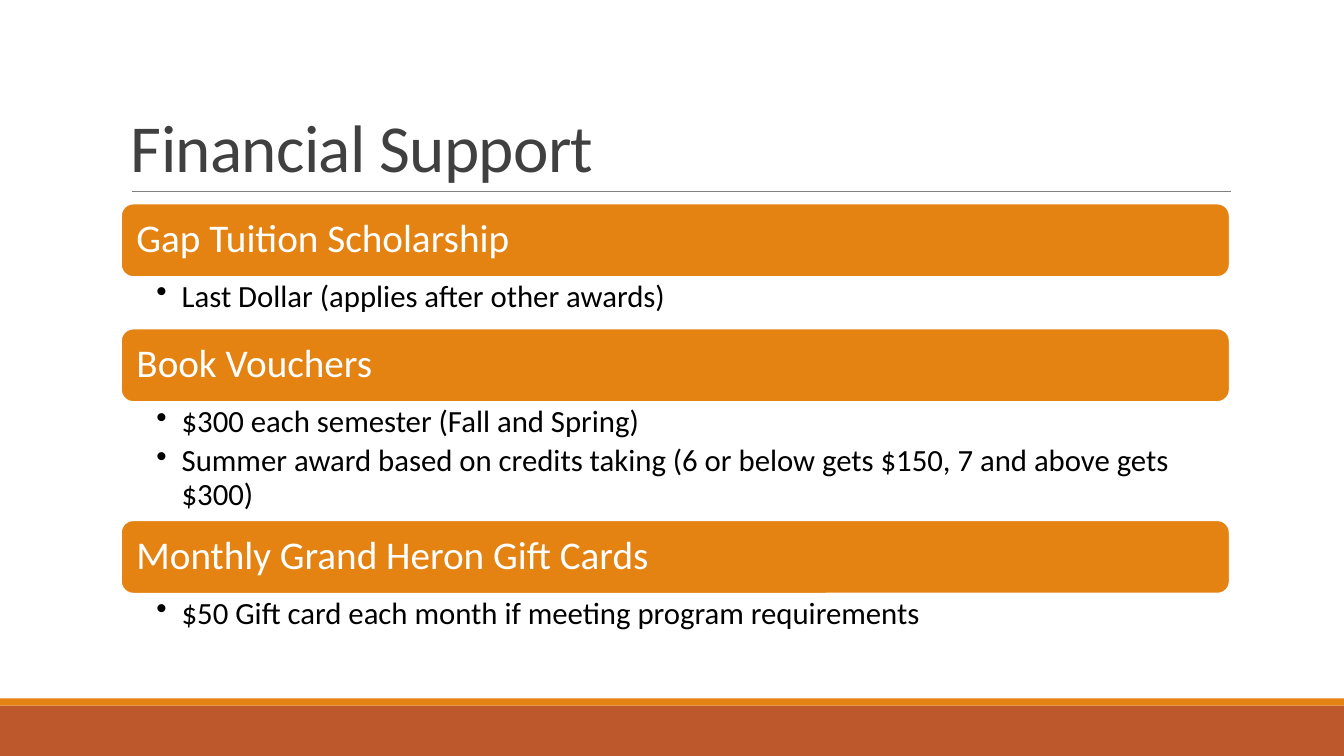
import dataclasses

import pptx
import pptx.dml.color
import pptx.enum.shapes
import pptx.enum.text
import pptx.oxml
import pptx.oxml.ns
import pptx.util

Cm = pptx.util.Cm
Pt = pptx.util.Pt
RGB = pptx.dml.color.RGBColor.from_string
Shape = pptx.enum.shapes.MSO_SHAPE
Anchor = pptx.enum.text.MSO_ANCHOR


@dataclasses.dataclass(frozen=True)
class Theme:
    font: str = "Calibri"
    head: int = 48
    bar: int = 28
    item: int = 22
    orange: str = "E48312"
    rust: str = "BD582C"
    grey: str = "404040"
    rule: str = "808080"
    white: str = "FFFFFF"
    black: str = "000000"


THEME = Theme()
WIDE, HIGH = 33.87, 19.05
BAR = 1.85

# Heading, height of the list below it, list items
GROUPS = [
    ("Gap Tuition Scholarship", 1.3,
     ["Last Dollar (applies after other awards)"]),
    ("Book Vouchers", 2.98,
     ["$300 each semester (Fall and Spring)",
      "Summer award based on credits taking "
      "(6 or below gets $150, 7 and above gets $300)"]),
    ("Monthly Grand Heron Gift Cards", 1.3,
     ["$50 Gift card each month if meeting program requirements"]),
]


def apply(target, values):
    for name, value in values.items():
        setattr(target, name, value)


def frame(shape, anchor, pads):
    """Set the anchor and the left, top, right and bottom insets in cm."""
    names = ("margin_left", "margin_top", "margin_right", "margin_bottom")
    apply(shape.text_frame, {
        "word_wrap": True,
        "auto_size": pptx.enum.text.MSO_AUTO_SIZE.NONE,
        "vertical_anchor": anchor,
        **{name: Cm(pad) for name, pad in zip(names, pads)},
    })


def write(para, text, size, color, lead, after=0):
    """Fill a paragraph; after is a share of the type size."""
    apply(para, {
        "alignment": pptx.enum.text.PP_ALIGN.LEFT,
        "line_spacing": lead,
        "space_before": Pt(0),
        "space_after": Pt(size * after),
    })
    run = para.add_run()
    run.text = text
    apply(run.font, {"name": THEME.font, "size": Pt(size)})
    run.font.color.rgb = RGB(color)
    return run


def block(slide, kind, box, fill):
    shape = slide.shapes.add_shape(kind, *map(Cm, box))
    shape.shadow.inherit = False
    shape.fill.solid()
    shape.fill.fore_color.rgb = RGB(fill)
    shape.line.fill.background()
    return shape


def footer(slide, left, top, width, height):
    strip = 0.18
    block(slide, Shape.RECTANGLE,
          (left, top + strip, width, height - strip), THEME.rust)
    block(slide, Shape.RECTANGLE, (left, top, width, strip), THEME.orange)


def header(slide, left, top, width, height):
    """Place the title with a thin rule along its foot."""
    title = slide.shapes.title
    apply(title, {"left": Cm(left), "top": Cm(top),
                  "width": Cm(width), "height": Cm(height)})
    frame(title, Anchor.BOTTOM, (0.25, 0.13, 0.25, 0.13))
    run = write(title.text_frame.paragraphs[0], "Financial Support",
                THEME.head, THEME.grey, 0.85)
    run.font._element.set("spc", "-50")

    foot = Cm(top + height)
    rule = slide.shapes.add_connector(
        pptx.enum.shapes.MSO_CONNECTOR.STRAIGHT,
        Cm(left + 0.28), foot, Cm(left + width + 0.03), foot)
    rule.line.color.rgb = RGB(THEME.rule)
    rule.line.width = Pt(0.5)
    rule._element.spPr.append(pptx.oxml.parse_xml(
        "<a:effectLst %s/>" % pptx.oxml.ns.nsdecls("a")))


def bullet(para):
    props = para._p.get_or_add_pPr()
    props.set("marL", str(Cm(0.64)))
    props.set("indent", str(-Cm(0.64)))
    props.append(pptx.oxml.parse_xml(
        '<a:buChar %s char="•"/>' % pptx.oxml.ns.nsdecls("a")))


def group(slide, left, top, width, height, name, items):
    """Place a heading bar with its list below."""
    bar = block(slide, Shape.ROUNDED_RECTANGLE,
                (left, top, width, BAR), THEME.orange)
    bar.line.color.rgb = RGB(THEME.white)
    bar.line.width = Pt(1.25)
    frame(bar, Anchor.MIDDLE, (0.3,) * 4)
    write(bar.text_frame.paragraphs[0], name,
          THEME.bar, THEME.white, 0.9, 0.35)

    area = (left, top + BAR, width, height - BAR)
    notes = slide.shapes.add_textbox(*map(Cm, area))
    frame(notes, Anchor.TOP, (0.89, 0.1, 0.56, 0.1))
    for i, item in enumerate(items):
        text = notes.text_frame
        para = text.add_paragraph() if i else text.paragraphs[0]
        para.level = 1
        write(para, item, THEME.item, THEME.black, 0.9, 0.2)
        bullet(para)


def body(slide, left, top, width):
    for name, depth, items in GROUPS:
        height = BAR + depth
        group(slide, left, top, width, height, name, items)
        top += height


def main():
    deck = pptx.Presentation()
    apply(deck, {"slide_width": Cm(WIDE), "slide_height": Cm(HIGH)})
    slide = deck.slides.add_slide(deck.slide_layouts.get_by_name("Title Only"))
    footer(slide, 0, 17.6, WIDE, HIGH - 17.6)
    header(slide, 3.05, 0.79, 27.94, 4.04)
    body(slide, 3.05, 5.13, 27.94)
    deck.save("out.pptx")


if __name__ == "__main__":
    main()
